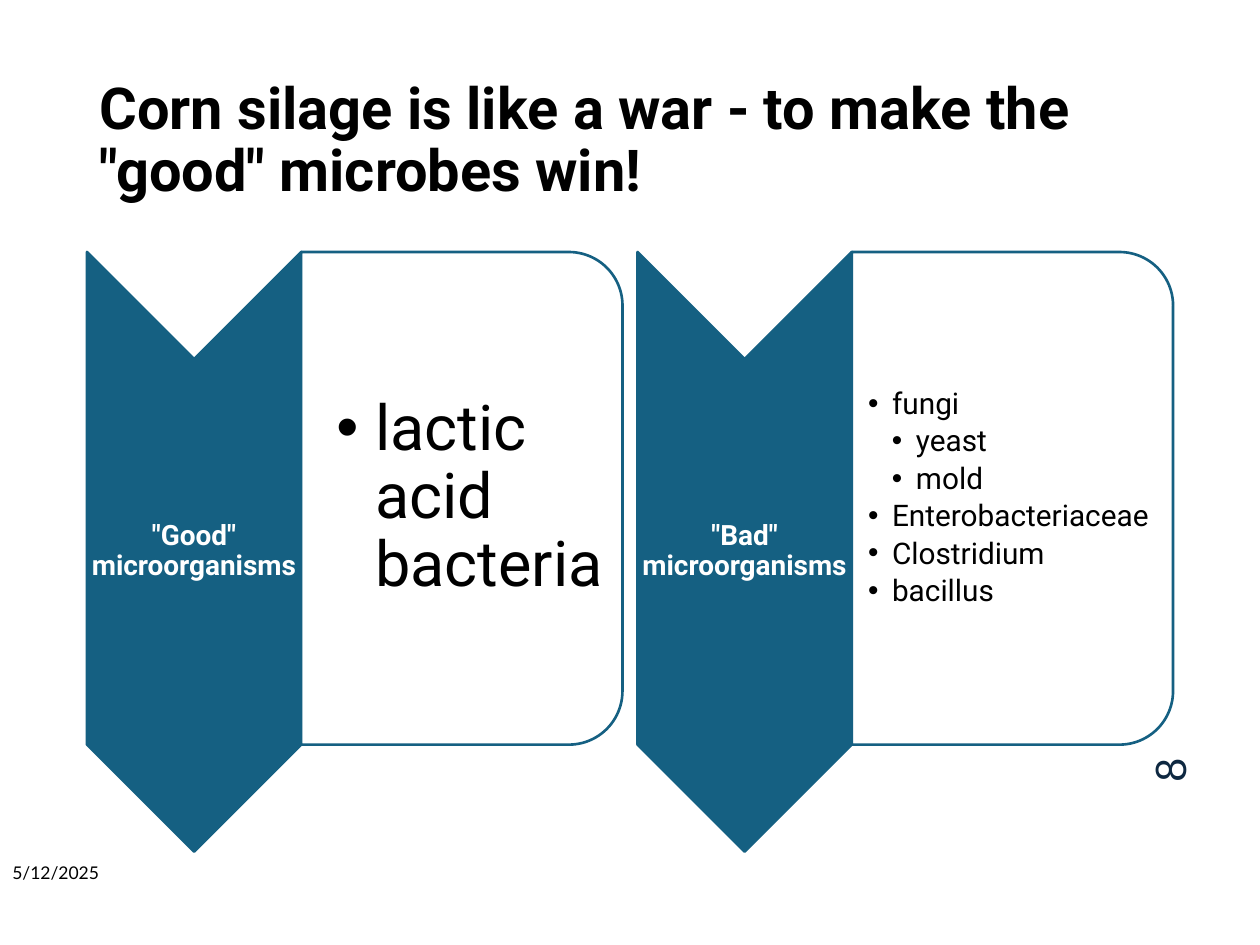
from dataclasses import dataclass

from lxml.etree import SubElement
from pptx import Presentation
from pptx.dml.color import RGBColor
from pptx.enum.shapes import MSO_SHAPE
from pptx.enum.text import MSO_ANCHOR, PP_ALIGN
from pptx.oxml.ns import qn
from pptx.util import Inches, Pt


@dataclass(frozen=True)
class Theme:
    heading_font: str = "Roboto"
    footer_font: str = "Lato"
    black: str = "000000"
    white: str = "FFFFFF"
    teal: str = "156082"
    navy: str = "0E2841"
    title_size: int = 33
    label_size: int = 16
    date_size: int = 10
    number_size: int = 24
    outline: float = 1.5
    panel_opacity: int = 90


THEME = Theme()
TITLE = 'Corn silage is like a war - to make the "good" microbes win!'
DATE = "5/12/2025"
PAGE_NUMBER = "8"
SIDES = [
    {"label": '"Good" microorganisms', "size": 36, "indent": 0.31,
     "insets": (0.28, 0.03), "members": [(1, "lactic acid bacteria")]},
    {"label": '"Bad" microorganisms', "size": 17, "indent": 0.19,
     "insets": (0.13, 0.01),
     "members": [(1, "fungi"), (2, "yeast"), (2, "mold"),
                 (1, "Enterobacteriaceae"), (1, "Clostridium"), (1, "bacillus")]},
]

SIDE_LEFT, SIDE_STEP, SIDE_TOP = 0.69, 4.37, 2.0
ARROW_WIDTH, ARROW_HEIGHT = 1.7, 4.76
PANEL_WIDTH, PANEL_HEIGHT = 2.55, 3.91
LIST_WIDTH, LIST_INSET = 2.43, 0.12


def add_text(shapes, text, box, size, *, font=THEME.heading_font, color=THEME.black,
             bold=False, align=PP_ALIGN.LEFT, insets=(0.1, 0.05, 0.1, 0.05),
             spacing=1.0, after=0, indent=0, rotation=0):
    """Add a text box holding one string, or a bulleted list of (level, string)."""
    holder = shapes.add_textbox(*map(Inches, box))
    holder.rotation = rotation
    frame = holder.text_frame
    frame.word_wrap = True
    frame.vertical_anchor = MSO_ANCHOR.MIDDLE
    (frame.margin_left, frame.margin_top,
     frame.margin_right, frame.margin_bottom) = map(Inches, insets)
    lines = [(0, text)] if isinstance(text, str) else text
    for index, (level, words) in enumerate(lines):
        paragraph = frame.paragraphs[0] if index == 0 else frame.add_paragraph()
        paragraph.text = words
        paragraph.alignment = align
        paragraph.line_spacing = spacing
        paragraph.space_after = Pt(after)
        if level:
            paragraph.level = level
            properties = paragraph._p.get_or_add_pPr()
            properties.set("marL", str(Inches(indent * level)))
            properties.set("indent", str(Inches(-indent)))
            SubElement(properties, qn("a:buFont")).set("typeface", "Arial")
            SubElement(properties, qn("a:buChar")).set("char", "•")
        style = paragraph.runs[0].font
        style.name, style.size, style.bold = font, Pt(size), bold
        style.color.rgb = RGBColor.from_string(color)


def add_turned_shape(shapes, preset, left, top, width, height, fill, opacity=100):
    """Add a shape turned a quarter clockwise so that it covers the given area."""
    turned = shapes.add_shape(
        preset, Inches(left + (width - height) / 2), Inches(top + (height - width) / 2),
        Inches(height), Inches(width))
    turned.rotation = 90
    turned.shadow.inherit = False
    turned.fill.solid()
    turned.fill.fore_color.rgb = RGBColor.from_string(fill)
    if opacity < 100:
        color = turned._element.spPr.find(qn("a:solidFill"))[0]
        SubElement(color, qn("a:alpha")).set("val", str(opacity * 1000))
    turned.line.color.rgb = RGBColor.from_string(THEME.teal)
    turned.line.width = Pt(THEME.outline)


def add_side(slide, side, left):
    """Add one camp of microbes: a labelled arrow and its panel of members."""
    shapes = slide.shapes.add_group_shape().shapes
    panel_left = left + ARROW_WIDTH
    add_turned_shape(shapes, MSO_SHAPE.CHEVRON, left, SIDE_TOP,
                     ARROW_WIDTH, ARROW_HEIGHT, THEME.teal)
    point = ARROW_WIDTH / 2
    add_text(shapes, side["label"],
             (left, SIDE_TOP + point, ARROW_WIDTH, ARROW_HEIGHT - 2 * point),
             THEME.label_size, color=THEME.white, bold=True, align=PP_ALIGN.CENTER,
             insets=(0.01,) * 4, spacing=0.9)
    add_turned_shape(shapes, MSO_SHAPE.ROUND_2_SAME_RECTANGLE, panel_left, SIDE_TOP,
                     PANEL_WIDTH, PANEL_HEIGHT, THEME.white, THEME.panel_opacity)
    first, rest = side["insets"]
    add_text(shapes, side["members"],
             (panel_left, SIDE_TOP + LIST_INSET, LIST_WIDTH,
              PANEL_HEIGHT - 2 * LIST_INSET),
             side["size"], insets=(first, rest, rest, rest), spacing=0.9,
             after=3, indent=side["indent"])


def main():
    """Build the corn silage slide and save it."""
    deck = Presentation()
    deck.slide_width, deck.slide_height = Inches(10), Inches(7.5)
    slide = deck.slides.add_slide(deck.slide_layouts[6])
    add_text(slide.shapes, TITLE, (0.69, 0.4, 8.62, 1.45), THEME.title_size,
             bold=True, spacing=0.9)
    for index, side in enumerate(SIDES):
        add_side(slide, side, SIDE_LEFT + index * SIDE_STEP)
    add_text(slide.shapes, DATE, (0, 6.76, 3.74, 0.33), THEME.date_size,
             font=THEME.footer_font)
    add_text(slide.shapes, PAGE_NUMBER, (8.56, 6.44, 1.44, 0.4), THEME.number_size,
             font=THEME.footer_font, color=THEME.navy, align=PP_ALIGN.RIGHT,
             rotation=270)
    deck.save("out.pptx")


if __name__ == "__main__":
    main()
